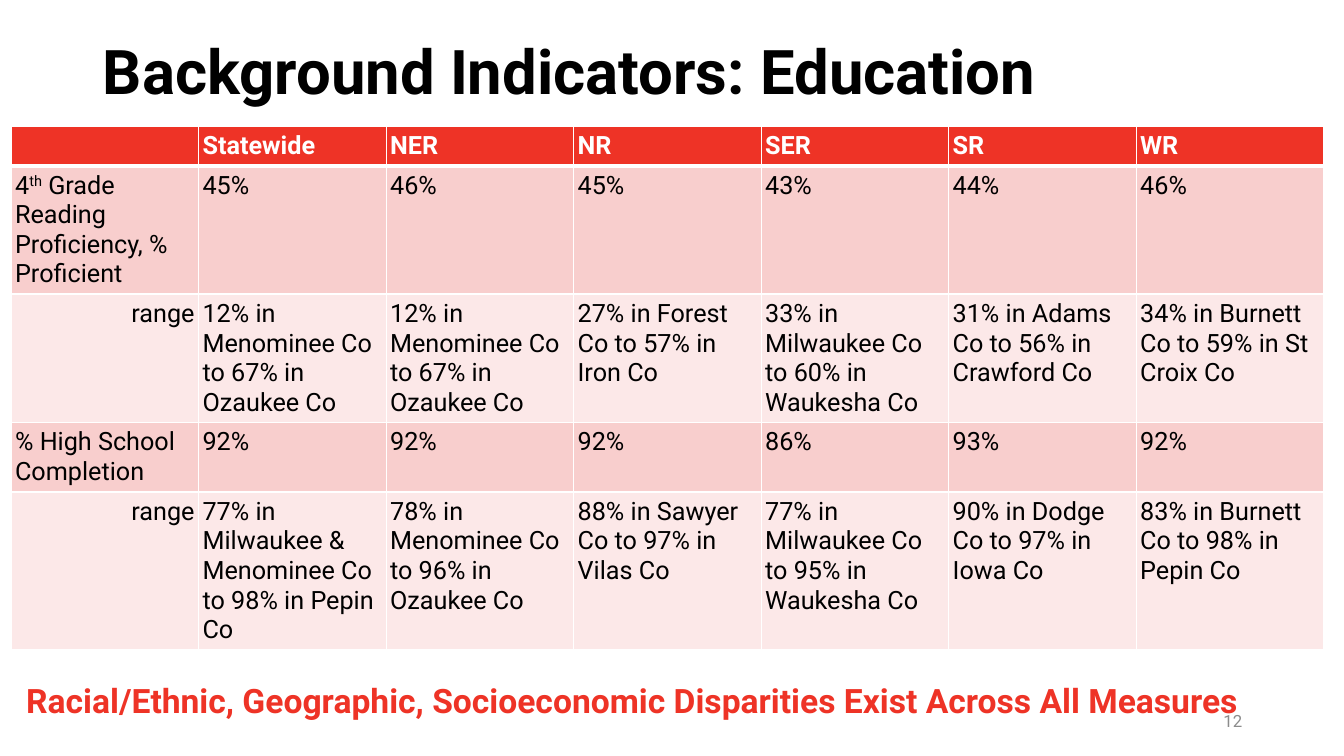
import pptx
import pptx.dml.color
import pptx.enum.text
import pptx.oxml
import pptx.oxml.ns
import pptx.util
from dataclasses import dataclass

Inches = pptx.util.Inches
Align = pptx.enum.text.PP_ALIGN
Anchor = pptx.enum.text.MSO_ANCHOR
AutoSize = pptx.enum.text.MSO_AUTO_SIZE

TITLE = "Background Indicators: Education"
TAKEAWAY = "Racial/Ethnic, Geographic, Socioeconomic Disparities Exist Across All Measures"
PAGE = "12"
REGIONS = ["", "Statewide", "NER", "NR", "SER", "SR", "WR"]
# A label given as a tuple has its second part raised.
INDICATORS = [
    [("4", "th", " Grade Reading Proficiency, % Proficient"),
     "45%", "46%", "45%", "43%", "44%", "46%"],
    ["range",
     "12% in Menominee Co to 67% in Ozaukee Co",
     "12% in Menominee Co to 67% in Ozaukee Co",
     "27% in Forest Co to 57% in Iron Co",
     "33% in Milwaukee Co to 60% in Waukesha Co",
     "31% in Adams Co to 56% in Crawford Co",
     "34% in Burnett Co to 59% in St Croix Co"],
    ["% High School Completion",
     "92%", "92%", "92%", "86%", "93%", "92%"],
    ["range",
     "77% in Milwaukee & Menominee Co to 98% in Pepin Co",
     "78% in Menominee Co to 96% in Ozaukee Co",
     "88% in Sawyer Co to 97% in Vilas Co",
     "77% in Milwaukee Co to 95% in Waukesha Co",
     "90% in Dodge Co to 97% in Iowa Co",
     "83% in Burnett Co to 98% in Pepin Co"],
]
ROW_HEIGHTS = [0.38, 1.23, 1.23, 0.69, 1.52]
COLUMN_WIDTH = 1.86


@dataclass(frozen=True)
class Theme:
    font: str = "Roboto"
    ink: str = "000000"
    white: str = "FFFFFF"
    red: str = "EE3326"
    value_band: str = "F8CECD"
    range_band: str = "FCE8E8"
    grey: str = "8C8C8C"
    title_size: int = 44
    takeaway_size: int = 24
    table_size: int = 18
    page_size: int = 12


THEME = Theme()


def rgb(color):
    return pptx.dml.color.RGBColor.from_string(color)


def write(frame, text, *, size, color=THEME.ink, bold=False, align=Align.LEFT):
    """Fill a text frame; the second part of a tuple is set as superscript."""
    paragraph = frame.paragraphs[0]
    paragraph.alignment = align
    parts = text if isinstance(text, tuple) else (text,)
    for index, part in enumerate(parts):
        run = paragraph.add_run()
        run.text = part
        run.font.name = THEME.font
        run.font.size = pptx.util.Pt(size)
        run.font.bold = bold
        run.font.color.rgb = rgb(color)
        if index == 1:
            run._r.get_or_add_rPr().set("baseline", "30000")
    return paragraph


def add_border(cell, side, points):
    cell._tc.get_or_add_tcPr().append(pptx.oxml.parse_xml(
        f'<a:{side} {pptx.oxml.ns.nsdecls("a")} w="{pptx.util.Pt(points)}">'
        f'<a:solidFill><a:srgbClr val="{THEME.white}"/></a:solidFill></a:{side}>'))


def format_cell(cell, row, fill):
    cell.margin_left = cell.margin_right = Inches(0.04)
    cell.margin_top = cell.margin_bottom = Inches(0.05)
    heavy_side = {0: "lnB", 1: "lnT"}.get(row)
    for side in ("lnL", "lnR", "lnT", "lnB"):
        add_border(cell, side, 3 if side == heavy_side else 1)
    cell.fill.solid()
    cell.fill.fore_color.rgb = rgb(fill)


def add_title(slide):
    title = slide.shapes.title
    title.left, title.top = Inches(0.92), Inches(0.01)
    title.width, title.height = Inches(11.5), Inches(1.45)
    frame = title.text_frame
    frame.auto_size = AutoSize.NONE
    frame.vertical_anchor = Anchor.MIDDLE
    heading = write(frame, TITLE, size=THEME.title_size, bold=True)
    heading.line_spacing = 0.9


def add_indicator_table(slide):
    rows = [REGIONS] + INDICATORS
    table = slide.shapes.add_table(
        len(rows), len(REGIONS), Inches(0.11), Inches(1.25),
        Inches(COLUMN_WIDTH * len(REGIONS)), Inches(sum(ROW_HEIGHTS))).table
    for column in table.columns:
        column.width = Inches(COLUMN_WIDTH)
    for r, (values, height) in enumerate(zip(rows, ROW_HEIGHTS)):
        table.rows[r].height = Inches(height)
        header = r == 0
        band = THEME.value_band if r % 2 else THEME.range_band
        for c, value in enumerate(values):
            cell = table.cell(r, c)
            format_cell(cell, r, THEME.red if header else band)
            write(cell.text_frame, value, size=THEME.table_size, bold=header,
                  color=THEME.white if header else THEME.ink,
                  align=Align.RIGHT if value == "range" else Align.LEFT)


def add_text(slide, text, left, top, width, height, anchor=Anchor.TOP, **style):
    frame = slide.shapes.add_textbox(
        Inches(left), Inches(top), Inches(width), Inches(height)).text_frame
    frame.word_wrap = True
    frame.vertical_anchor = anchor
    write(frame, text, **style)


def main():
    deck = pptx.Presentation()
    deck.slide_width, deck.slide_height = Inches(13.33), Inches(7.5)
    slide = deck.slides.add_slide(deck.slide_layouts[5])
    add_title(slide)
    add_indicator_table(slide)
    add_text(slide, TAKEAWAY, 0.13, 6.7, 12.28, 0.5, size=THEME.takeaway_size,
             color=THEME.red, bold=True, align=Align.CENTER)
    add_text(slide, PAGE, 9.42, 6.95, 3, 0.4, anchor=Anchor.MIDDLE,
             size=THEME.page_size, color=THEME.grey, align=Align.RIGHT)
    deck.save("out.pptx")


if __name__ == "__main__":
    main()
